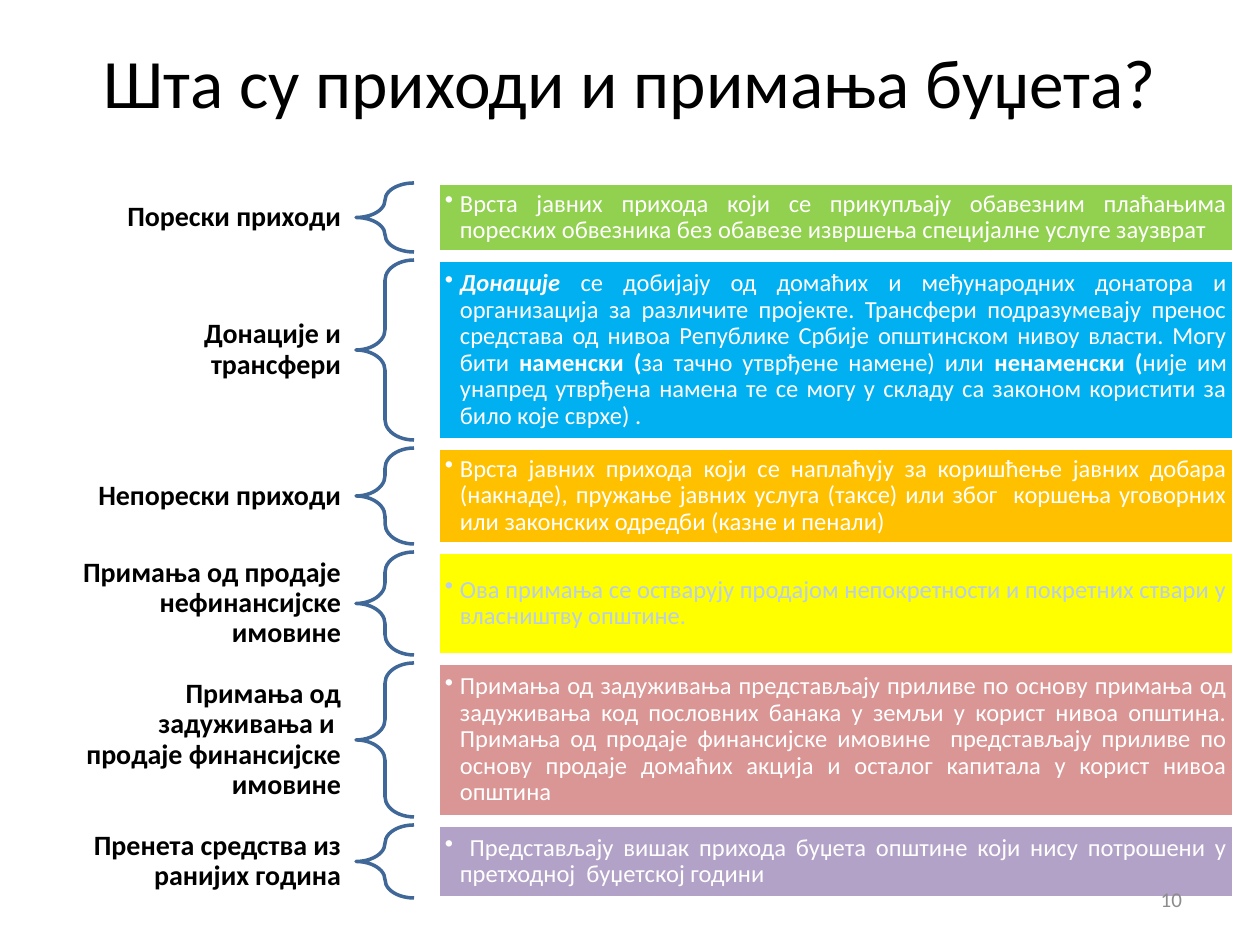
from dataclasses import dataclass

from lxml import etree
from pptx import Presentation
from pptx import util as u
from pptx.dml.color import RGBColor
from pptx.enum import shapes, text
from pptx.oxml.ns import qn

PX = u.Inches(1) / 126


def px(length):
    return u.Emu(round(length * PX))


@dataclass(frozen=True)
class Theme:
    font: str = "Calibri"
    ink: str = "000000"
    white: str = "FFFFFF"
    pale: str = "B9CDE5"
    brace: str = "3F6797"
    muted: str = "8C8C8C"
    green: str = "92D050"
    blue: str = "00B0F0"
    orange: str = "FFC000"
    yellow: str = "FFFF00"
    rose: str = "D99694"
    violet: str = "B3A2C7"
    title_size: float = 39.6
    label_size: int = 16
    body_size: int = 14
    number_size: int = 12


class Deck:
    def __init__(self, theme):
        self.theme = theme
        self.file = Presentation()
        self.file.slide_width, self.file.slide_height = px(1260), px(945)
        self.slide = self.file.slides.add_slide(self.file.slide_layouts[5])

    def style(self, run, size, color, bold=False, italic=False):
        run.font.name = self.theme.font
        run.font.size = u.Pt(size)
        run.font.color.rgb = RGBColor.from_string(color)
        run.font.bold, run.font.italic = bold, italic

    def frame(self, holder, inset_x, inset_y):
        frame = holder.text_frame
        frame.word_wrap = True
        frame.auto_size = text.MSO_AUTO_SIZE.NONE
        frame.vertical_anchor = text.MSO_ANCHOR.MIDDLE
        frame.margin_left = frame.margin_right = px(inset_x)
        frame.margin_top = frame.margin_bottom = px(inset_y)
        return frame

    def title(self, wording, left, top, width, height):
        heading = self.slide.shapes.title
        heading.left, heading.top = px(left), px(top)
        heading.width, heading.height = px(width), px(height)
        frame = self.frame(heading, 13, 6)
        frame.text = wording
        frame.paragraphs[0].alignment = text.PP_ALIGN.CENTER
        self.style(frame.paragraphs[0].runs[0], self.theme.title_size, self.theme.ink)

    def label(self, wording, box, size, color, bold=False):
        holder = self.slide.shapes.add_textbox(*map(px, box))
        frame = self.frame(holder, 15, 5)
        frame.text = wording
        paragraph = frame.paragraphs[0]
        paragraph.alignment = text.PP_ALIGN.RIGHT
        paragraph.line_spacing = 0.9
        self.style(paragraph.runs[0], size, color, bold)

    def shape(self, kind, box, line):
        shape = self.slide.shapes.add_shape(kind, *map(px, box))
        shape.shadow.inherit = False
        shape.line.color.rgb = RGBColor.from_string(line)
        shape.line.width = u.Pt(2)
        return shape

    def brace(self, box):
        brace = self.shape(shapes.MSO_SHAPE.LEFT_BRACE, box, self.theme.brace)
        brace.fill.background()
        brace.adjustments[0], brace.adjustments[1] = 0.35, 0.5

    def panel(self, parts, box, fill, color):
        panel = self.shape(shapes.MSO_SHAPE.RECTANGLE, box, self.theme.white)
        panel.fill.solid()
        panel.fill.fore_color.rgb = RGBColor.from_string(fill)
        paragraph = self.frame(panel, 7, 7).paragraphs[0]
        paragraph.alignment = text.PP_ALIGN.JUSTIFY
        paragraph.line_spacing = 0.9
        paragraph.level = 1
        for wording, emphasis in parts:
            run = paragraph.add_run()
            run.text = wording
            self.style(run, self.theme.body_size, color, "b" in emphasis, "i" in emphasis)
        self.bullet(paragraph)

    def bullet(self, paragraph):
        properties = paragraph._p.get_or_add_pPr()
        properties.set("marL", str(px(15)))
        properties.set("indent", str(px(-15)))
        etree.SubElement(properties, qn("a:buChar")).set("char", "•")


def main():
    theme = Theme()
    deck = Deck(theme)
    deck.title("Шта су приходи и примања буџета?", 63, 38, 1134, 86)

    revenues = [
        ("Порески приходи", 1, 69, theme.green, theme.white, [
            ("Врста јавних прихода који се прикупљају обавезним плаћањима пореских "
             "обвезника без обавезе извршења специјалне услуге заузврат", "")]),
        ("Донације и трансфери", 2, 180, theme.blue, theme.white, [
            ("Донације ", "bi"),
            ("се добијају од домаћих и међународних донатора и организација за "
             "различите пројекте. Трансфери подразумевају пренос средстава од нивоа "
             "Републике Србије општинском нивоу власти. Могу бити ", ""),
            ("наменски (", "b"),
            ("за тачно утврђене намене) или ", ""),
            ("ненаменски (", "b"),
            ("није им унапред утврђена намена те се могу у складу са законом "
             "користити за било које сврхе) .", "")]),
        ("Непорески приходи", 1, 96, theme.orange, theme.white, [
            ("Врста јавних прихода који се наплаћују за коришћење јавних добара "
             "(накнаде), пружање јавних услуга (таксе) или због  коршења уговорних "
             "или законских одредби (казне и пенали)", "")]),
        ("Примања од продаје нефинансијске имовине", 3, 103, theme.yellow, theme.pale, [
            ("Ова примања се остварују продајом непокретности и покретних ствари у "
             "власништву општине.", "")]),
        ("Примања од задуживања и  продаје финансијске имовине", 4, 154,
         theme.rose, theme.white, [
            ("Примања од задуживања представљају приливе по основу примања од "
             "задуживања код пословних банака у земљи у корист нивоа општина. "
             "Примања од продаје финансијске имовине  представљају приливе по основу "
             "продаје домаћих акција и осталог капитала у корист нивоа општина", "")]),
        ("Пренета средства из ранијих година", 2, 73, theme.violet, theme.white, [
            (" Представљају вишак прихода буџета општине који нису потрошени у "
             "претходној  буџетској години", "")]),
    ]

    top, gap = 183, 8
    for name, lines, height, fill, color, description in revenues:
        label_height = 14 + 30 * lines
        label_top = top + (height - label_height) / 2
        deck.label(name, (63, label_top, 293, label_height),
                   theme.label_size, theme.ink, bold=True)
        deck.brace((356, top, 58, height))
        deck.panel(description, (438, top, 796, height), fill, color)
        top += height + gap

    deck.label("10", (903, 876, 294, 50), theme.number_size, theme.muted)
    deck.file.save("out.pptx")


if __name__ == "__main__":
    main()
